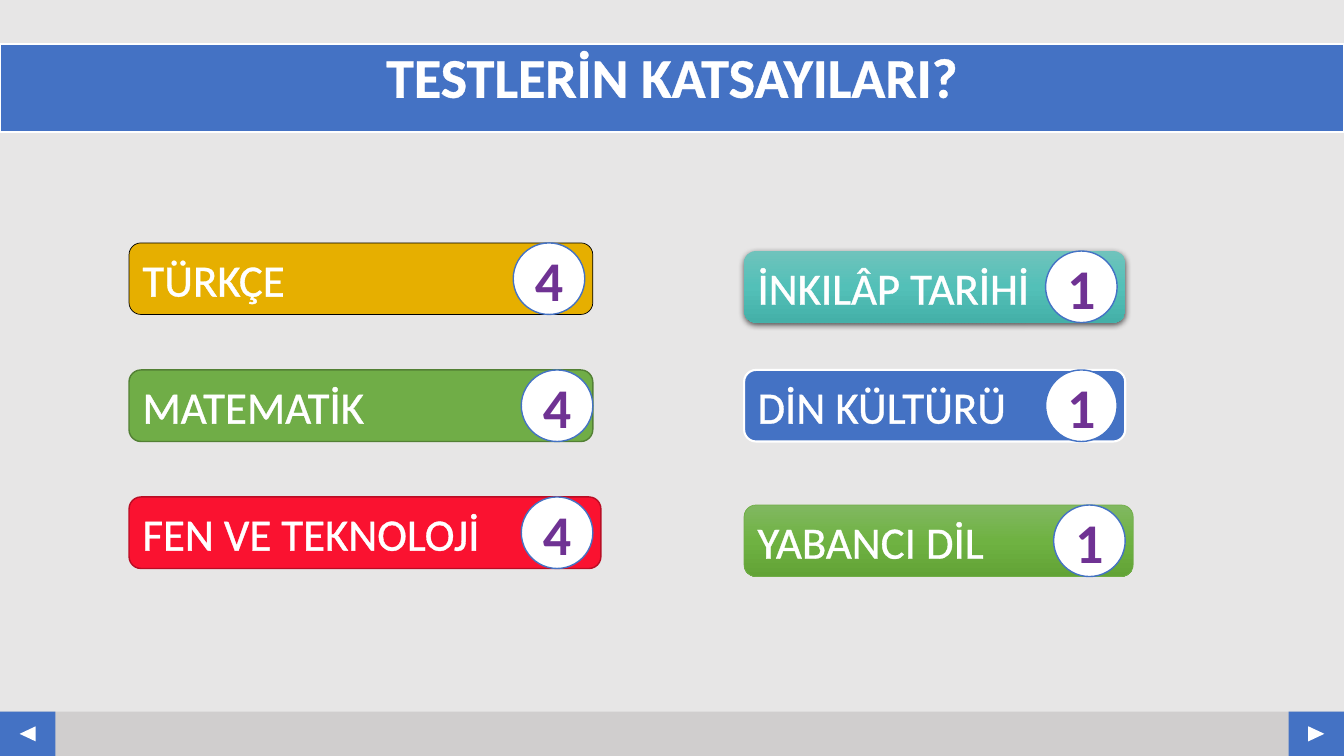
"""Build the slide that lists the weight of each test."""
from copy import deepcopy

from lxml import etree
from pptx import Presentation
from pptx.dml.color import RGBColor
from pptx.enum.shapes import MSO_SHAPE
from pptx.enum.text import MSO_ANCHOR, MSO_AUTO_SIZE, PP_ALIGN
from pptx.oxml import parse_xml
from pptx.oxml.ns import nsdecls, qn
from pptx.util import Inches, Pt

RECTANGLE, TRIANGLE, OVAL = MSO_SHAPE.RECTANGLE, MSO_SHAPE.ISOSCELES_TRIANGLE, MSO_SHAPE.OVAL
LABEL = MSO_SHAPE.FLOWCHART_ALTERNATE_PROCESS
LEFT, CENTER = PP_ALIGN.LEFT, PP_ALIGN.CENTER
TOP, MIDDLE = MSO_ANCHOR.TOP, MSO_ANCHOR.MIDDLE
NO_AUTOFIT = MSO_AUTO_SIZE.NONE

WIDTH, HEIGHT = 13.33, 7.5
FOOTER_HEIGHT, BUTTON_WIDTH = 0.44, 0.55
ARROW_WIDTH, ARROW_HEIGHT = 0.15, 0.16
LABEL_HEIGHT = 0.71

COLORS = {
    "background": "E7E6E6", "footer": "D0CECE", "blue": "4472C4", "white": "FFFFFF",
    "black": "000000", "purple": "6F3293", "gold": "E6AF00", "green": "70AD47",
    "dark green": "538035", "red": "FA1230", "dark red": "B90D24",
}
TEAL_FADE = ("6FC3BC", "53C0B8", "44B0A8")
GREEN_FADE = ("81B861", "6FB242", "62A336")

TESTS = [
    ("TÜRKÇE", "4", 1.28, 2.41, 4.6, 5.09, "gold", ("black", 0.5), False),
    ("MATEMATİK", "4", 1.28, 3.67, 4.6, 5.17, "green", ("dark green", 1), False),
    ("FEN VE TEKNOLOJİ", "4", 1.28, 4.93, 4.68, 5.17, "red", ("dark red", 1), False),
    ("İNKILÂP TARİHİ", "1", 7.38, 2.49, 3.78, 10.37, TEAL_FADE, None, True),
    ("DİN KÜLTÜRÜ", "1", 7.38, 3.67, 3.78, 10.37, "blue", ("white", 1.5), False),
    ("YABANCI DİL", "1", 7.38, 5.01, 3.86, 10.45, GREEN_FADE, ("green", 0.5), False),
]


class SlideBuilder:
    """Hold the style and the current slide."""

    font = "Calibri"

    def __init__(self, deck):
        self.slide = deck.slides.add_slide(deck.slide_layouts[5])
        fill = self.slide.background.fill
        fill.solid()
        fill.fore_color.rgb = self.color("background")

    def color(self, name):
        return RGBColor.from_string(COLORS[name])

    def paint(self, shape, fill, line=None):
        if isinstance(fill, str):
            shape.fill.solid()
            shape.fill.fore_color.rgb = self.color(fill)
        else:
            self.fade(shape, fill)
        if line:
            name, width = line
            shape.line.color.rgb = self.color(name)
            shape.line.width = Pt(width)
        else:
            shape.line.fill.background()

    def fade(self, shape, shades):
        shape.fill.gradient()
        shape.fill.gradient_angle = 270
        stops = shape.element.spPr.find(".//" + qn("a:gsLst"))
        stops.append(deepcopy(stops[0]))
        for index, (stop, shade) in enumerate(zip(shape.fill.gradient_stops, shades)):
            stop.position = index / 2
            stop.color.rgb = RGBColor.from_string(shade)

    def shape(self, kind, left, top, width, height, fill, line=None, rotation=0):
        shape = self.slide.shapes.add_shape(
            kind, Inches(left), Inches(top), Inches(width), Inches(height))
        shape.shadow.inherit = False
        shape.rotation = rotation
        self.paint(shape, fill, line)
        return shape

    def drop_shadow(self, shape):
        effects = shape.element.spPr.find(qn("a:effectLst"))
        shadow = etree.SubElement(effects, qn("a:outerShdw"), blurRad=str(Pt(4.5)),
                                  dist=str(Pt(1.5)), dir="5400000", rotWithShape="0")
        tint = etree.SubElement(shadow, qn("a:srgbClr"), val=COLORS["black"])
        etree.SubElement(tint, qn("a:alpha"), val="63000")

    def set_text(self, shape, text, size, color, bold, align, anchor=MIDDLE, outlined=False):
        frame = shape.text_frame
        frame.text = text
        frame.word_wrap = True
        frame.auto_size = NO_AUTOFIT
        frame.vertical_anchor = anchor
        para = frame.paragraphs[0]
        para.alignment = align
        font = para.font
        font.name, font.size, font.bold = self.font, Pt(size), bold
        font.color.rgb = self.color(color)
        if outlined:
            outline = parse_xml(
                f'<a:ln {nsdecls("a")} w="{Pt(1.45)}"><a:solidFill>'
                f'<a:srgbClr val="{COLORS[color]}"/></a:solidFill></a:ln>')
            para.runs[0].font._element.insert(0, outline)

    def title(self, text):
        title = self.slide.shapes.title
        title.left, title.top = Inches(0), Inches(0.44)
        title.width, title.height = Inches(WIDTH), Inches(0.87)
        self.paint(title, "blue", ("white", 1.5))
        self.set_text(title, text, 40, "white", True, CENTER, TOP, outlined=True)
        title.text_frame.paragraphs[0].line_spacing = 0.9

    def footer(self):
        top = HEIGHT - FOOTER_HEIGHT
        self.shape(RECTANGLE, 0, top, WIDTH, FOOTER_HEIGHT, "footer")
        for left, rotation in ((0, 270), (WIDTH - BUTTON_WIDTH, 90)):
            self.shape(RECTANGLE, left, top, BUTTON_WIDTH, FOOTER_HEIGHT, "blue")
            self.shape(TRIANGLE, left + (BUTTON_WIDTH - ARROW_WIDTH) / 2,
                       top + (FOOTER_HEIGHT - ARROW_HEIGHT) / 2,
                       ARROW_WIDTH, ARROW_HEIGHT, "white", rotation=rotation)

    def test(self, name, weight, left, top, width, badge_left, fill, line, shadowed):
        label = self.shape(LABEL, left, top, width, LABEL_HEIGHT, fill, line)
        self.set_text(label, name, 32, "white", False, LEFT, outlined=True)
        if shadowed:
            self.drop_shadow(label)
        badge = self.shape(OVAL, badge_left, top, LABEL_HEIGHT, LABEL_HEIGHT,
                           "white", ("blue", 1))
        self.set_text(badge, weight, 40, "purple", True, CENTER)


def main():
    deck = Presentation()
    deck.slide_width, deck.slide_height = Inches(WIDTH), Inches(HEIGHT)
    page = SlideBuilder(deck)
    page.footer()
    page.title("TESTLERİN KATSAYILARI?")
    for test in TESTS:
        page.test(*test)
    deck.save("out.pptx")


if __name__ == "__main__":
    main()
